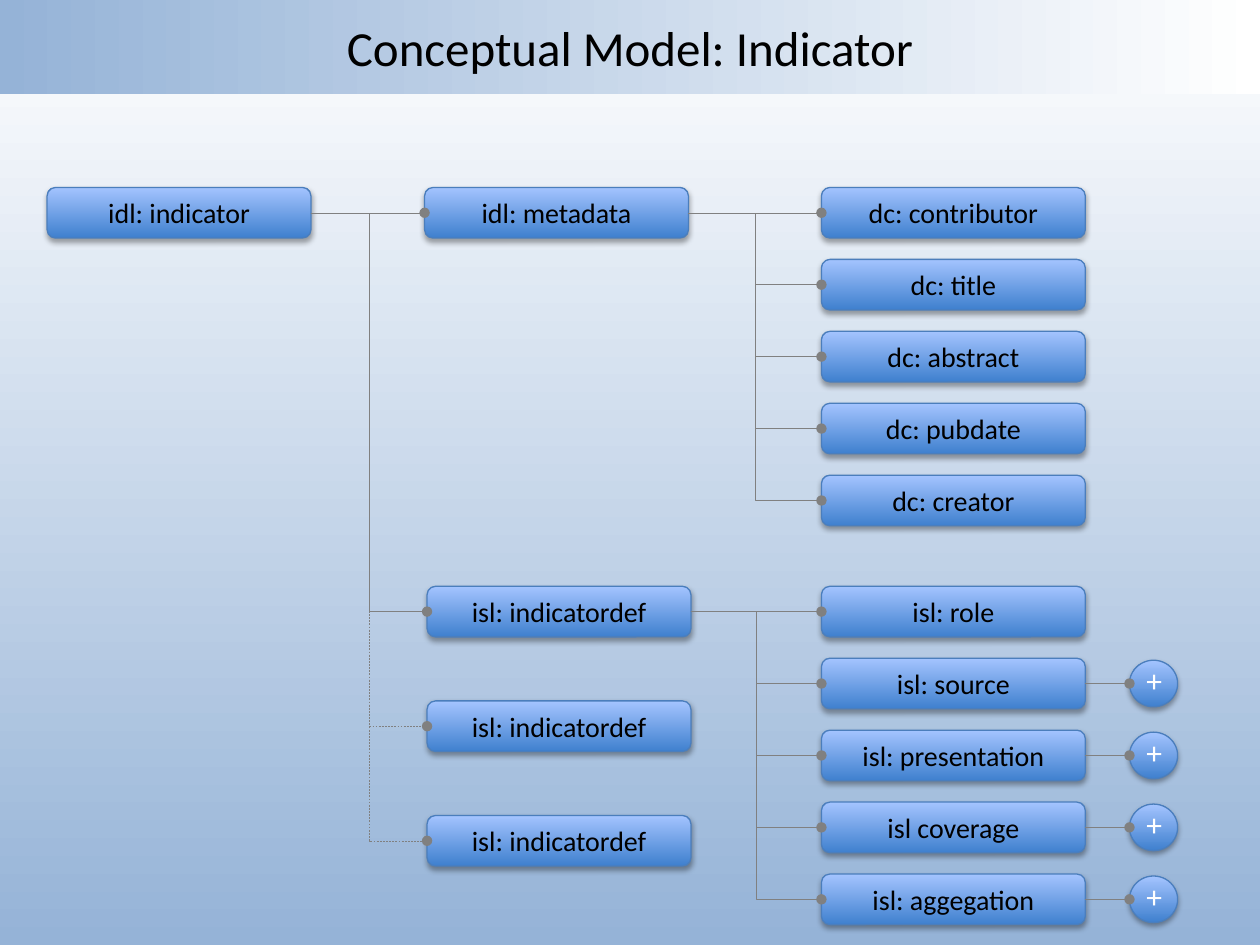
from lxml import etree
from pptx import Presentation
from pptx import util as u
from pptx.dml.color import RGBColor
from pptx.enum import dml, shapes, text
from pptx.oxml import ns

BLACK = RGBColor(0x00, 0x00, 0x00)
WHITE = RGBColor(0xFF, 0xFF, 0xFF)
PALE_BLUE = RGBColor(0x95, 0xB3, 0xD7)
BOX_BOTTOM = RGBColor(0x3F, 0x80, 0xCE)
BOX_TOP = RGBColor(0xA4, 0xC4, 0xFF)
OUTLINE = RGBColor(0x4B, 0x7E, 0xBC)
GREY = RGBColor(0x80, 0x80, 0x80)

SLIDE_W, SLIDE_H = u.Cm(25.4), u.Cm(19.05)
BOX_W, BOX_H = u.Cm(5.32), u.Cm(1.02)
ROOT_X, METADATA_X, DEF_X, LEAF_X = u.Cm(0.95), u.Cm(8.56), u.Cm(8.61), u.Cm(16.56)
METADATA_Y, DEF_Y = u.Cm(3.78), u.Cm(11.82)
LEAF_STEP, DEF_STEP = u.Cm(1.45), u.Cm(2.31)
PLUS_X, PLUS_W, PLUS_H = u.Cm(22.77), u.Cm(0.97), u.Cm(0.94)
LEFT, RIGHT = 1, 3

METADATA_FIELDS = ["dc: contributor", "dc: title", "dc: abstract", "dc: pubdate", "dc: creator"]
DEF_FIELDS = ["isl: role", "isl: source", "isl: presentation", "isl coverage", "isl: aggegation"]


def set_gradient(fill, start, end, angle):
    """Two-colour linear gradient; angle runs counter-clockwise."""
    fill.gradient()
    fill.gradient_angle = angle
    for stop, color in zip(fill.gradient_stops, (start, end)):
        stop.color.rgb = color


def write(shape, words, size, color):
    shape.text_frame.vertical_anchor = text.MSO_ANCHOR.MIDDLE
    paragraph = shape.text_frame.paragraphs[0]
    paragraph.alignment = text.PP_ALIGN.CENTER
    run = paragraph.add_run()
    run.text = words
    run.font.name = "Calibri"
    run.font.size = u.Pt(size)
    run.font.color.rgb = color


def add_soft_shadow(shape):
    shape.shadow.inherit = False
    effects = shape._element.spPr.find(ns.qn("a:effectLst"))
    shadow = etree.SubElement(effects, ns.qn("a:outerShdw"), blurRad=str(u.Pt(3.1)),
                              dist=str(u.Pt(1.8)), dir="5400000", rotWithShape="0")
    color = etree.SubElement(shadow, ns.qn("a:srgbClr"), val=str(BLACK))
    etree.SubElement(color, ns.qn("a:alpha"), val="35000")


def add_node(slide, kind, x, y, width, height):
    node = slide.shapes.add_shape(kind, x, y, width, height)
    set_gradient(node.fill, BOX_BOTTOM, BOX_TOP, 90)
    node.line.color.rgb = OUTLINE
    node.line.width = u.Pt(0.75)
    add_soft_shadow(node)
    return node


def add_box(slide, label, x, y):
    box = add_node(slide, shapes.MSO_SHAPE.ROUNDED_RECTANGLE, x, y, BOX_W, BOX_H)
    write(box, label, 16, BLACK)
    return box


def add_column(slide, labels, x, top, step):
    return [add_box(slide, label, x, top + row * step) for row, label in enumerate(labels)]


def add_plus(slide, box):
    """Circle that marks a box with further children."""
    middle = box.top + box.height // 2
    plus = add_node(slide, shapes.MSO_SHAPE.OVAL, PLUS_X, middle - PLUS_H // 2, PLUS_W, PLUS_H)
    frame = plus.text_frame
    frame.margin_left = frame.margin_right = u.Cm(0.2)
    frame.margin_top, frame.margin_bottom = 0, u.Cm(0.13)
    write(plus, "+", 18, WHITE)
    return plus


def add_link(slide, parent, child, dashed=False):
    """Elbow line from the parent's right side to a dot on the child's left side."""
    link = slide.shapes.add_connector(
        shapes.MSO_CONNECTOR.ELBOW,
        parent.left + parent.width, parent.top + parent.height // 2,
        child.left, child.top + child.height // 2)
    link.begin_connect(parent, RIGHT)
    if child.auto_shape_type == shapes.MSO_SHAPE.ROUNDED_RECTANGLE:
        link.end_connect(child, LEFT)
    link.line.color.rgb = GREY
    link.line.width = u.Pt(0.25)
    if dashed:
        link.line.dash_style = dml.MSO_LINE.DASH
    properties = link._element.spPr
    etree.SubElement(properties.find(ns.qn("a:ln")), ns.qn("a:tailEnd"), type="oval")
    etree.SubElement(properties, ns.qn("a:effectLst"))


def add_title(slide, words):
    banner = slide.shapes.add_shape(shapes.MSO_SHAPE.RECTANGLE, 0, 0, SLIDE_W, u.Cm(1.9))
    banner.shadow.inherit = False
    banner.line.fill.background()
    set_gradient(banner.fill, PALE_BLUE, WHITE, 0)
    write(banner, words, 28, BLACK)


def main():
    deck = Presentation()
    deck.slide_width, deck.slide_height = SLIDE_W, SLIDE_H
    slide = deck.slides.add_slide(deck.slide_layouts[6])
    set_gradient(slide.background.fill, WHITE, PALE_BLUE, 270)
    add_title(slide, "Conceptual Model: Indicator")

    indicator = add_box(slide, "idl: indicator", ROOT_X, METADATA_Y)
    metadata = add_box(slide, "idl: metadata", METADATA_X, METADATA_Y)
    definitions = add_column(slide, ["isl: indicatordef"] * 3, DEF_X, DEF_Y, DEF_STEP)
    metadata_fields = add_column(slide, METADATA_FIELDS, LEAF_X, METADATA_Y, LEAF_STEP)
    def_fields = add_column(slide, DEF_FIELDS, LEAF_X, DEF_Y, LEAF_STEP)

    add_link(slide, indicator, metadata)
    for number, definition in enumerate(definitions):
        add_link(slide, indicator, definition, dashed=number > 0)
    for parent, fields in ((metadata, metadata_fields), (definitions[0], def_fields)):
        for field in fields:
            add_link(slide, parent, field)
    for field in def_fields[1:]:
        add_link(slide, field, add_plus(slide, field))

    deck.save("out.pptx")


if __name__ == "__main__":
    main()
